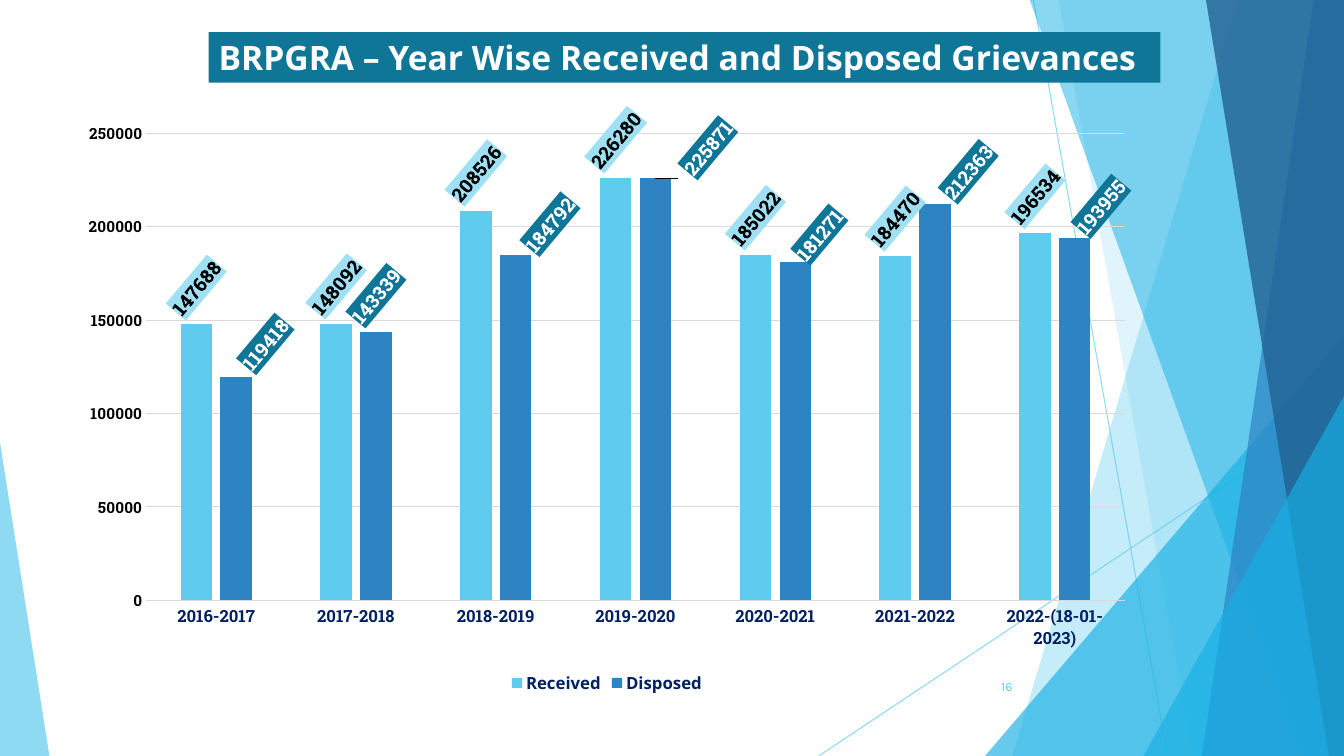
from copy import deepcopy
from dataclasses import dataclass

from pptx import Presentation
from pptx.chart.data import CategoryChartData
from pptx.dml.color import RGBColor
from pptx.enum.chart import XL_CHART_TYPE as CT, XL_LABEL_POSITION as LP
from pptx.enum.chart import XL_LEGEND_POSITION as LEG, XL_TICK_MARK as TM
from pptx.enum.shapes import MSO_CONNECTOR as CONN, MSO_SHAPE as SHAPE
from pptx.enum.text import MSO_ANCHOR as ANCHOR, PP_ALIGN as ALIGN
from pptx.oxml import parse_xml
from pptx.oxml.ns import nsdecls, qn
from pptx.util import Inches, Pt

W, H, TOP = 13.33, 7.5, -0.01
SKY, CYAN, BLUE, TEAL, NAVY = "5FCBEF", "17B0E4", "2E83C3", "0F7698", "002060"
SLAB, NOTO = "Roboto Slab", "Noto Sans"


@dataclass
class Ray:
    start: tuple[float, float]
    end: tuple[float, float]


@dataclass
class Band:
    top_x: float
    bottom_x: float
    color: str
    alpha: int


@dataclass
class Triangle:
    x: float
    y: float
    w: float
    apex: float
    color: str
    alpha: int


@dataclass
class Bars:
    name: str
    values: list[int]
    color: str
    label_fill: str
    label_color: str
    shifts: dict[int, tuple[float, float]]


DECOR = [
    Ray((10.25, 0), (11.58, H)),
    Ray((W, 4.03), (8.12, H)),
    Band(12.28, 10.04, SKY, 36),
    Band(10.5, 11.83, SKY, 20),
    Triangle(9.77, 3.33, 3.56, 1, CYAN, 66),
    Band(10.21, 12.91, CYAN, 50),
    Band(13.03, 11.92, BLUE, 70),
    Band(11.96, 13.18, "226292", 80),
    Triangle(11.34, 3.93, 1.99, 1, CYAN, 66),
    Triangle(0, 4.39, 0.49, 0, SKY, 70),
]
YEARS = ["2016-2017", "2017-2018", "2018-2019", "2019-2020", "2020-2021",
         "2021-2022", "2022-(18-01-2023)"]
SERIES = [
    Bars("Received", [147688, 148092, 208526, 226280, 185022, 184470, 196534],
         SKY, "9FE0F5", "000000", {}),
    Bars("Disposed", [119418, 143339, 184792, 225871, 181271, 212363, 193955],
         BLUE, TEAL, "FFFFFF",
         {0: (0.29, 0.02), 2: (0.34, 0.06), 3: (0.52, 0.06),
          4: (0.24, 0.08), 5: (0.33, 0.05), 6: (0.26, 0.05)}),
]
CHART_W, CHART_H = 10.7, 5.88


def rgb(color: str) -> RGBColor:
    return RGBColor.from_string(color)


def set_alpha(fill_parent, alpha: int) -> None:
    clr = next(fill_parent.iter(qn("a:srgbClr")))
    clr.append(parse_xml(f'<a:alpha {nsdecls("a")} val="{alpha * 1000}"/>'))


def paint(sp, color: str, alpha: int = 100) -> None:
    sp.shadow.inherit = False
    sp.fill.solid()
    sp.fill.fore_color.rgb = rgb(color)
    sp.line.fill.background()
    if alpha < 100:
        set_alpha(sp._element.spPr, alpha)


def set_font(font, size: float, color: str, name: str, bold: bool = True) -> None:
    font.size, font.bold, font.name = Pt(size), bold, name
    font.color.rgb = rgb(color)


def draw_ray(s, ray: Ray) -> None:
    cx = s.shapes.add_connector(CONN.STRAIGHT, *map(Inches, ray.start + ray.end))
    cx.line.color.rgb, cx.line.width = rgb(SKY), Pt(0.75)
    sp_pr = cx._element.spPr
    set_alpha(sp_pr, 70)
    sp_pr.append(parse_xml(f'<a:effectLst {nsdecls("a")}/>'))


def draw_band(s, band: Band) -> None:
    fb = s.shapes.build_freeform(Inches(band.top_x), Inches(TOP))
    corners = [(W, TOP), (W, H), (band.bottom_x, H)]
    fb.add_line_segments([(Inches(x), Inches(y)) for x, y in corners])
    paint(fb.convert_to_shape(), band.color, band.alpha)


def draw_triangle(s, tri: Triangle) -> None:
    sp = s.shapes.add_shape(SHAPE.ISOSCELES_TRIANGLE, Inches(tri.x), Inches(tri.y),
                            Inches(tri.w), Inches(H - tri.y))
    sp.adjustments[0] = tri.apex
    paint(sp, tri.color, tri.alpha)


def layout_xml(**places: float):
    tags = "".join(f'<c:{k} val="{v}"/>' for k, v in places.items())
    modes = '<c:layoutTarget val="inner"/><c:xMode val="edge"/><c:yMode val="edge"/>'
    head = modes if "w" in places else ""
    return parse_xml(f'<c:layout {nsdecls("c")}><c:manualLayout>{head}{tags}'
                     '</c:manualLayout></c:layout>')


def style_series(ser, bars: Bars) -> None:
    ser.format.fill.solid()
    ser.format.fill.fore_color.rgb = rgb(bars.color)
    ser.invert_if_negative = False
    labels = ser.data_labels
    labels.show_value, labels.position = True, LP.OUTSIDE_END
    set_font(labels.font, 14, bars.label_color, SLAB)
    el = labels._element
    tx_pr = el.find(qn("c:txPr"))
    tx_pr.find(qn("a:bodyPr")).set("rot", str(-50 * 60000))
    tx_pr.addprevious(parse_xml(
        f'<c:spPr {nsdecls("c", "a")}><a:solidFill><a:srgbClr val="{bars.label_fill}"/>'
        '</a:solidFill><a:ln><a:noFill/></a:ln></c:spPr>'))
    common = [deepcopy(child) for child in el]
    for i, (idx, (dx, dy)) in enumerate(bars.shifts.items()):
        label = parse_xml(f'<c:dLbl {nsdecls("c")}><c:idx val="{idx}"/></c:dLbl>')
        label.append(layout_xml(x=round(dx / CHART_W, 4), y=round(dy / CHART_H, 4)))
        label.extend(deepcopy(common))
        el.insert(i, label)


def draw_chart(s) -> None:
    data = CategoryChartData()
    data.categories = YEARS
    for bars in SERIES:
        data.add_series(bars.name, bars.values)
    chart = s.shapes.add_chart(CT.COLUMN_CLUSTERED, Inches(0.67), Inches(1.05),
                               Inches(CHART_W), Inches(CHART_H), data).chart
    set_font(chart.font, 10, "000000", "Karla", False)
    chart.has_title = False
    chart.has_legend = True
    chart.legend.position, chart.legend.include_in_layout = LEG.BOTTOM, False
    set_font(chart.legend.font, 12, NAVY, NOTO)

    plot = chart.plots[0]
    plot.gap_width, plot.overlap, plot.vary_by_categories = 219, -27, False
    for ser, bars in zip(plot.series, SERIES):
        style_series(ser, bars)

    cat, val = chart.category_axis, chart.value_axis
    for axis, size, color in ((cat, 12, NAVY), (val, 11, "000000")):
        axis.major_tick_mark = axis.minor_tick_mark = TM.NONE
        set_font(axis.tick_labels.font, size, color, SLAB)
    val.minimum_scale, val.maximum_scale, val.major_unit = 0, 250000, 50000
    val.format.line.fill.background()
    for line in (cat.format.line, val.major_gridlines.format.line):
        line.color.rgb, line.width = rgb("D9D9D9"), Pt(0.75)

    area = chart._chartSpace.chart.plotArea
    for old in area.findall(qn("c:layout")):
        area.remove(old)
    area.insert(0, layout_xml(x=0.073, y=0.044, w=0.907, h=0.79))


def write(sp, text: str, size: float, color: str, name: str, bold: bool, align) -> None:
    tf = sp.text_frame
    tf.word_wrap, tf.vertical_anchor = True, ANCHOR.MIDDLE
    p = tf.paragraphs[0]
    p.alignment = align
    r = p.add_run()
    r.text = text
    set_font(r.font, size, color, name, bold)


def main() -> None:
    prs = Presentation()
    prs.slide_width, prs.slide_height = Inches(W), Inches(H)
    s = prs.slides.add_slide(prs.slide_layouts[6])
    painters = {Ray: draw_ray, Band: draw_band, Triangle: draw_triangle}
    for item in DECOR:
        painters[type(item)](s, item)
    draw_chart(s)
    title = s.shapes.add_shape(SHAPE.RECTANGLE, Inches(2.07), Inches(0.32),
                               Inches(9.44), Inches(0.5))
    paint(title, TEAL)
    write(title, "BRPGRA – Year Wise Received and Disposed Grievances",
          24, "FFFFFF", NOTO, True, ALIGN.LEFT)
    number = s.shapes.add_textbox(Inches(9.39), Inches(6.61), Inches(0.75), Inches(0.4))
    write(number, "16", 9, SKY, "Karla", False, ALIGN.RIGHT)
    prs.save("out.pptx")


if __name__ == "__main__":
    main()
